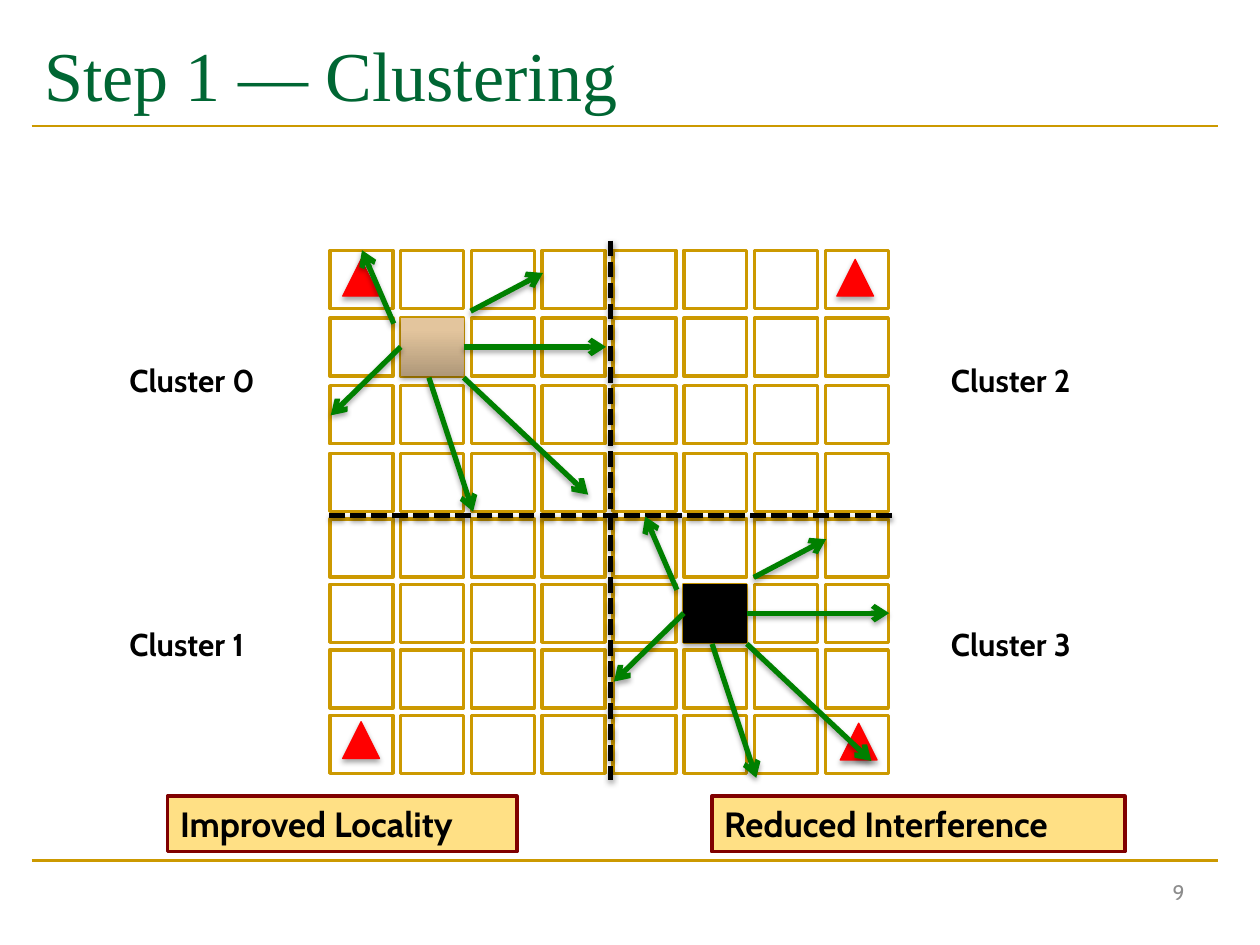
from lxml.etree import SubElement
from pptx import Presentation
from pptx.dml.color import RGBColor
from pptx.enum.dml import MSO_LINE as Dash
from pptx.enum.shapes import MSO_CONNECTOR as Connector, MSO_SHAPE as Shape
from pptx.enum.text import MSO_ANCHOR as Anchor, PP_ALIGN as Align
from pptx.oxml.ns import qn
from pptx.util import Cm, Pt

GOLD, GREEN, RED, BLACK = "CC9900", "008000", "FF0000", "000000"

# Grid of cells, in cm; the lower half has its own row pitch
CELL_W, CELL_H = 1.27, 1.17
COLUMNS = [6.65 + 1.427 * i for i in range(8)]
ROWS = [5.05 + 1.363 * i for i in range(4)] + [10.46 + 1.32 * i for i in range(4)]

# Arrows around a core: start and end relative to its top left corner, in cm
FAN = [
    (1.27, 0.58, 4.14, 0.58),
    (1.27, 1.20, 3.78, 3.56),
    (0.57, 1.20, 1.46, 3.90),
    (1.41, -0.14, 2.87, -0.91),
    (0, 0.58, -1.41, 1.96),
    (-0.14, 0.11, -0.78, -1.37),
]


def color(value):
    return RGBColor.from_string(value)


def set_shadow(item, alpha):
    """Give a shape or connector a soft shadow below it; alpha 0 means none."""
    properties = item._element.spPr
    effects = properties.find(qn("a:effectLst"))
    if effects is None:
        effects = SubElement(properties, qn("a:effectLst"))
    if alpha:
        shadow = SubElement(effects, qn("a:outerShdw"), blurRad="39400", dist="22900",
                            dir="5400000", rotWithShape="0")
        black = SubElement(shadow, qn("a:srgbClr"), val=BLACK)
        SubElement(black, qn("a:alpha"), val=str(alpha * 1000))


def add_shape(page, kind, x, y, w, h, fill=None, line=None, width=0.75, alpha=0):
    shape = page.shapes.add_shape(kind, Cm(x), Cm(y), Cm(w), Cm(h))
    if fill:
        shape.fill.solid()
        shape.fill.fore_color.rgb = color(fill)
    if line:
        shape.line.color.rgb = color(line)
        shape.line.width = Pt(width)
    else:
        shape.line.fill.background()
    shape.shadow.inherit = False
    set_shadow(shape, alpha)
    return shape


def add_line(page, x1, y1, x2, y2, stroke, width=3, alpha=0, dash=None, arrow=False):
    line = page.shapes.add_connector(Connector.STRAIGHT, Cm(x1), Cm(y1), Cm(x2), Cm(y2))
    line.line.color.rgb = color(stroke)
    line.line.width = Pt(width)
    if dash:
        line.line.dash_style = dash
    if arrow:
        SubElement(line.line._get_or_add_ln(), qn("a:tailEnd"), type="arrow")
    set_shadow(line, alpha)


def write(box, text, size, font="Cabin", ink=BLACK, bold=False, align=Align.LEFT):
    frame = box.text_frame
    frame.word_wrap = True
    frame.vertical_anchor = Anchor.MIDDLE
    para = frame.paragraphs[0]
    para.alignment = align
    span = para.add_run()
    span.text = text
    span.font.size = Pt(size)
    span.font.name = font
    span.font.bold = bold
    span.font.color.rgb = color(ink)


def add_text(page, text, x, y, w, h, **style):
    write(page.shapes.add_textbox(Cm(x), Cm(y), Cm(w), Cm(h)), text, **style)


def add_callout(page, text, x, w):
    box = add_shape(page, Shape.RECTANGLE, x, 16.05, w, 1.12, "FFE085", "800000", 2)
    write(box, text, size=20, bold=True)


def add_core(page, column, row, **style):
    """Draw a highlighted cell with its arrows and return the cell."""
    x, y = COLUMNS[column], ROWS[row]
    core = add_shape(page, Shape.RECTANGLE, x, y, CELL_W, CELL_H, alpha=35, **style)
    for x1, y1, x2, y2 in FAN:
        add_line(page, x + x1, y + y1, x + x2, y + y2, GREEN, alpha=35, arrow=True)
    return core


def main():
    deck = Presentation()
    deck.slide_width, deck.slide_height = Cm(25.4), Cm(19.05)
    page = deck.slides.add_slide(deck.slide_layouts[6])

    # Rules, title and page number
    for y in (17.35, 2.54):
        add_line(page, 0.64, y, 24.56, y, GOLD, width=1.5)
    add_text(page, "Step 1 — Clustering", 0.64, 0.43, 23.93, 2.11,
             size=40, font="Times New Roman", ink="006633")
    add_text(page, "9", 18.21, 17.35, 5.92, 1.27, size=12, ink="8C8C8C", align=Align.RIGHT)

    # Cells
    for y in ROWS:
        for x in COLUMNS:
            add_shape(page, Shape.RECTANGLE, x, y, CELL_W, CELL_H, "FFFFFF", GOLD, 2)

    # Corner triangles
    for x, y in ((6.91, 5.23), (16.87, 5.23), (6.91, 14.55), (16.94, 14.58)):
        add_shape(page, Shape.ISOSCELES_TRIANGLE, x, y, 0.74, 0.74, RED, RED, alpha=35)

    # Core of cluster 0, shaded from bottom to top
    core = add_core(page, 1, 1)
    core.fill.gradient()
    core.fill.gradient_angle = 90
    for stop, (position, tint) in zip(core.fill.gradient_stops, ((0, "AF9879"), (0.8, "E3C59D"))):
        stop.position = position
        stop.color.rgb = color(tint)

    # Borders between clusters
    for ends in ((12.3, 4.85, 12.3, 15.72), (17.98, 10.39, 6.58, 10.39)):
        add_line(page, *ends, BLACK, alpha=38, dash=Dash.SQUARE_DOT)

    # Core of cluster 3
    add_core(page, 5, 5, fill=BLACK, line=BLACK)

    # Callouts
    add_callout(page, "Improved Locality", 3.38, 7.04)
    add_callout(page, "Reduced Interference", 14.35, 8.33)

    # Cluster names, numbered down each column
    for number in range(4):
        side, level = divmod(number, 2)
        add_text(page, f"Cluster {number}", 2.36 + 16.56 * side, 7.14 + 5.33 * level,
                 3.4, 1.02, size=18, bold=True)

    deck.save("out.pptx")


if __name__ == "__main__":
    main()
